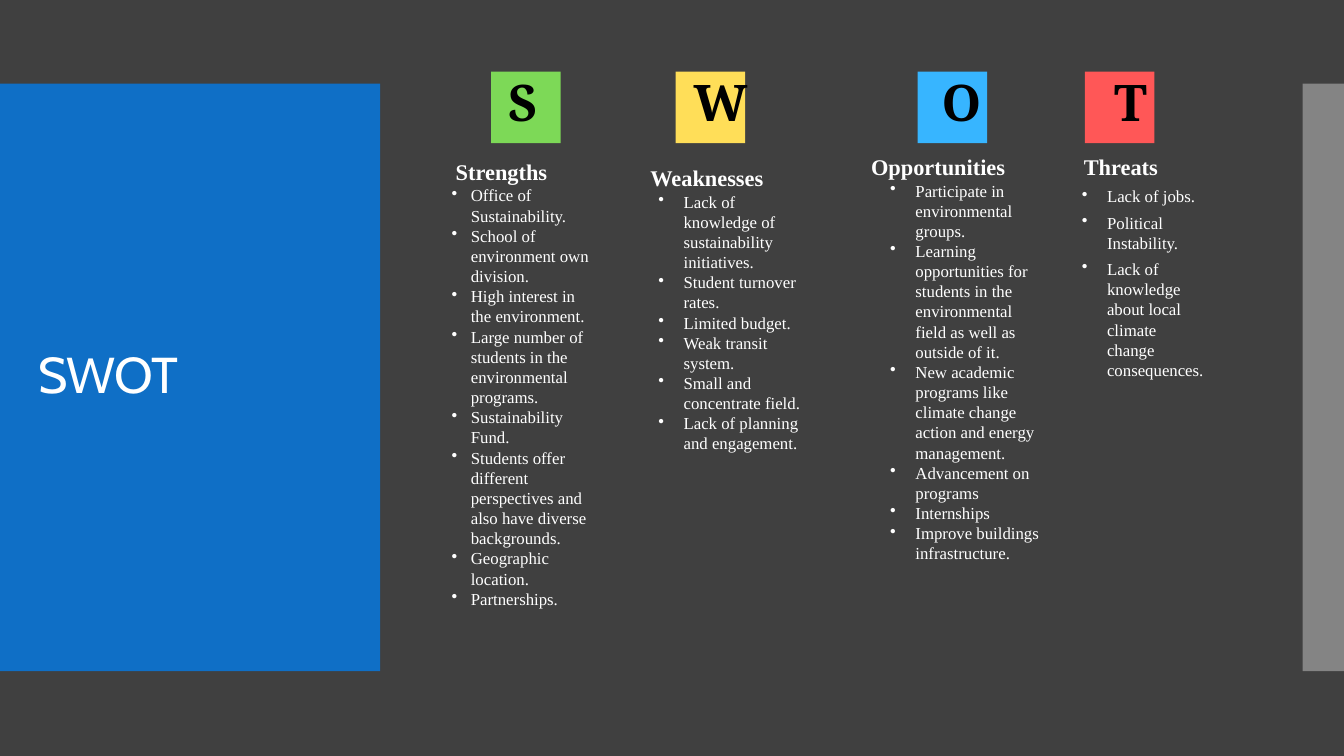
from dataclasses import dataclass

from lxml import etree
from pptx import Presentation
from pptx import util as u
from pptx.dml.color import RGBColor
from pptx.enum import shapes, text
from pptx.oxml import ns

WHITE = "FFFFFF"
BODY_FONT = "Times New Roman"
TILE_TOP, TILE_WIDTH, TILE_HEIGHT = 0.71, 0.69, 0.71
HEADING_LINE, BULLET_LINE = 20, 14.4


@dataclass
class Column:
    heading: str
    color: str
    tile_left: float
    letter_indent: float
    box: tuple[float, float, float, float]
    heading_top: float
    heading_indent: float
    bullet_indent: float
    items: list[str]
    hanging: float = 0.25
    right_inset: float = 0
    space_before: float = 0


COLUMNS = [
    Column("Strengths", "7DD957", 4.87, 0.17, (4.19, 0.45, 1.75, 6.6),
           1.56, 0.33, 0.48, [
               "Office of Sustainability.",
               "School of environment own division.",
               "High interest in the environment.",
               "Large number of students in the environmental programs.",
               "Sustainability Fund.",
               "Students offer different perspectives and also have diverse backgrounds.",
               "Geographic location.",
               "Partnerships.",
           ], hanging=0.19),
    Column("Weaknesses", "FFDE58", 6.7, 0.18, (5.94, 0.65, 2.42, 5.17),
           1.62, 0.51, 0.84, [
               "Lack of knowledge of sustainability initiatives.",
               "Student turnover rates.",
               "Limited budget.",
               "Weak transit system.",
               "Small and concentrate field.",
               "Lack of planning and engagement.",
           ], right_inset=0.39),
    Column("Opportunities", "37B5FF", 9.1, 0.24, (8.31, 1.12, 2.04, 5.55),
           1.51, 0.33, 0.77, [
               "Participate in environmental groups.",
               "Learning opportunities for students in the environmental field "
               "as well as outside of it.",
               "New academic programs like climate change action and energy management.",
               "Advancement on programs",
               "Internships",
               "Improve buildings infrastructure.",
           ]),
    Column("Threats", "FF5757", 10.76, 0.29, (10.08, 0.58, 2.42, 5.17),
           1.51, 0.67, 0.9, [
               "Lack of jobs.",
               "Political Instability.",
               "Lack of knowledge about local climate change consequences.",
           ], right_inset=0.54, space_before=4.3),
]


def rgb(color: str) -> RGBColor:
    return RGBColor.from_string(color)


def add_rectangle(page, left: float, top: float, width: float, height: float,
                  color: str, opacity: int = 100):
    box = page.shapes.add_shape(shapes.MSO_SHAPE.RECTANGLE, u.Inches(left),
                                u.Inches(top), u.Inches(width), u.Inches(height))
    box.shadow.inherit = False
    box.fill.solid()
    box.fill.fore_color.rgb = rgb(color)
    box.line.fill.background()
    if opacity < 100:
        fill = box.fill._xPr.find(ns.qn("a:solidFill"))
        etree.SubElement(fill[0], ns.qn("a:alpha"), val=str(opacity * 1000))
    return box


def set_frame(frame, top: float = 0, right: float = 0) -> None:
    frame.word_wrap = True
    frame.vertical_anchor = text.MSO_ANCHOR.TOP
    frame.margin_left = frame.margin_bottom = 0
    frame.margin_top, frame.margin_right = u.Inches(top), u.Inches(right)


def write(para, words: str, *, size: float, font: str = BODY_FONT,
          color: str = WHITE, bold: bool = False, indent: float = 0,
          hanging: float = 0, line: float | u.Pt | None = None,
          before: float = 0, tracking: int = 0) -> None:
    """Fill a paragraph; a hanging indent gives it a bullet."""
    para.alignment = text.PP_ALIGN.LEFT
    para.space_before = u.Pt(before)
    para.line_spacing = line
    properties = para._p.get_or_add_pPr()
    properties.set("marL", str(u.Inches(indent)))
    properties.set("indent", str(-u.Inches(hanging)))
    if hanging:
        etree.SubElement(properties, ns.qn("a:buChar"), char="•")
    span = para.add_run()
    span.text = words
    span.font.name, span.font.size, span.font.bold = font, u.Pt(size), bold
    span.font.color.rgb = rgb(color)
    if tracking:
        span.font._element.set("spc", str(tracking))


def add_column(page, column: Column) -> None:
    box = page.shapes.add_textbox(*map(u.Inches, column.box))
    frame = box.text_frame
    set_frame(frame, column.heading_top - column.box[1], column.right_inset)
    write(frame.paragraphs[0], column.heading, size=16, bold=True,
          indent=column.heading_indent, line=u.Pt(HEADING_LINE))
    for item in column.items:
        write(frame.add_paragraph(), item, size=12, indent=column.bullet_indent,
              hanging=column.hanging, line=u.Pt(BULLET_LINE),
              before=column.space_before)

    tile = add_rectangle(page, column.tile_left, TILE_TOP, TILE_WIDTH,
                         TILE_HEIGHT, column.color)
    set_frame(tile.text_frame)
    write(tile.text_frame.paragraphs[0], column.heading[0], size=36,
          font="Noto Serif", color="000000", bold=True,
          indent=column.letter_indent)


def add_title(page) -> None:
    box = page.shapes.add_textbox(u.Inches(0.28), u.Inches(1.23),
                                  u.Inches(3.22), u.Inches(5.03))
    box.text_frame.word_wrap = True
    box.text_frame.vertical_anchor = text.MSO_ANCHOR.MIDDLE
    write(box.text_frame.paragraphs[0], "SWOT", size=36, font="Cabin",
          line=0.9, tracking=-60)


def main() -> None:
    deck = Presentation()
    deck.slide_width, deck.slide_height = u.Inches(13.33), u.Inches(7.5)
    page = deck.slides.add_slide(deck.slide_layouts[6])
    page.background.fill.solid()
    page.background.fill.fore_color.rgb = rgb("404040")
    add_rectangle(page, 0, 0.83, 3.77, 5.83, "0F6FC6")
    add_rectangle(page, 12.92, 0.83, 0.41, 5.83, "C8C8C8", opacity=50)
    add_title(page)
    for column in COLUMNS:
        add_column(page, column)
    deck.save("out.pptx")


if __name__ == "__main__":
    main()
